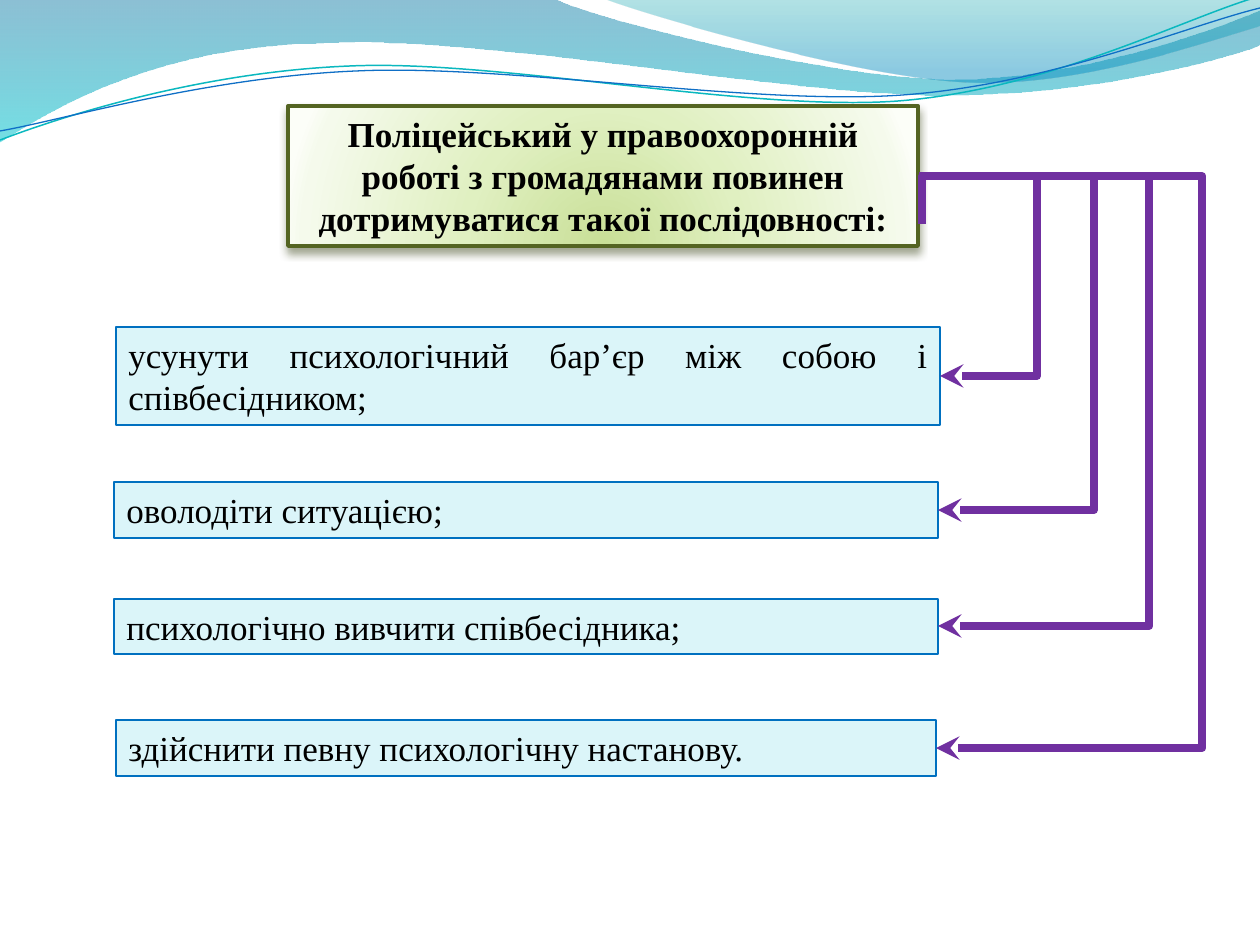
from dataclasses import dataclass
from typing import Optional

from lxml import etree
from pptx import Presentation
from pptx import util as u
from pptx.dml.color import RGBColor
from pptx.enum import shapes, text
from pptx.oxml import ns, parse_xml

PX = 914400 // 126  # EMU in one px
FONT = "Times New Roman"

BLACK = RGBColor(0x00, 0x00, 0x00)
PALE_CYAN = RGBColor(0xDB, 0xF5, 0xF9)
BLUE = RGBColor(0x00, 0x70, 0xC0)
PURPLE = RGBColor(0x70, 0x30, 0xA0)
OLIVE = RGBColor(0x54, 0x64, 0x22)
DARK_OLIVE = RGBColor(0x3A, 0x45, 0x19)
TEAL_LINE = RGBColor(0x0A, 0xB8, 0xBF)
BLUE_LINE = RGBColor(0x0F, 0x6F, 0xC6)
DEEP_TEAL = RGBColor(0x00, 0x74, 0xA1)
TURQUOISE = RGBColor(0x00, 0xC6, 0xCF)
SEA_GREEN = RGBColor(0x00, 0xA1, 0xA9)
SKY = RGBColor(0x00, 0x8B, 0xBF)
GREENS = (RGBColor(0xC9, 0xDF, 0x97), RGBColor(0xE0, 0xF0, 0xC1),
          RGBColor(0xF5, 0xFA, 0xEC), RGBColor(0xFC, 0xFE, 0xF8))

LINEAR_DOWN = '<a:lin ang="5400000" scaled="1"/>'
FROM_BELOW = ('<a:path path="circle"><a:fillToRect l="50000" t="130000" '
              'r="50000" b="-30000"/></a:path>')


@dataclass
class Stop:
    percent: int
    color: RGBColor
    alpha: int = 100


@dataclass
class Wave:
    start: tuple
    segments: list  # one point is a straight side, three points are a curve
    stops: Optional[list] = None
    line: Optional[RGBColor] = None
    weight: float = 0


@dataclass
class Step:
    wording: str
    left: int
    top: int
    width: int
    height: int
    lane: int  # x of the vertical part of its arrow
    from_side: bool = False  # arrow first climbs along the heading

    @property
    def tip(self) -> tuple:
        return self.left + self.width, self.top + self.height // 2


WAVES = [
    Wave((0, 0), [
        [(554, -1)],
        [(600, 21), (837, 79), (955, 79)],
        [(1075, 79), (1207, 33), (1260, 11)],
        [(1261, 45)],
        [(1239, 55), (1096, 96), (940, 95)],
        [(784, 95), (481, 35), (324, 43)],
        [(163, 45), (58, 105), (-1, 142)],
    ], stops=[Stop(0, DEEP_TEAL, 45), Stop(100, TURQUOISE, 55)]),
    Wave((604, -1), [
        [(641, 14), (859, 78), (969, 82)],
        [(1079, 87), (1211, 40), (1260, 26)],
        [(1260, 0)],
    ], stops=[Stop(0, SEA_GREEN, 30), Stop(80, SKY, 45)]),
    Wave((0, 140), [
        [(60, 117), (199, 72), (349, 66)],
        [(498, 59), (747, 112), (898, 101)],
        [(1050, 89), (1182, 19), (1257, -3)],
    ], line=TEAL_LINE, weight=0.85),
    Wave((0, 131), [
        [(59, 121), (207, 77), (357, 71)],
        [(508, 64), (752, 106), (903, 95)],
        [(1053, 84), (1186, 26), (1260, 8)],
    ], line=BLUE_LINE, weight=0.75),
]

HEADING = ("Поліцейський у правоохоронній роботі з громадянами повинен "
           "дотримуватися такої послідовності:")
STEPS = [
    Step("здійснити певну психологічну настанову.", 116, 720, 820, 56, 1202),
    Step("психологічно вивчити співбесідника;", 114, 599, 824, 55, 1149, True),
    Step("оволодіти ситуацією;", 114, 482, 824, 56, 1094),
    Step("усунути психологічний бар’єр між собою і співбесідником;",
         116, 327, 824, 98, 1037),
]
TRUNK = (919, 176)  # common start of the arrows
SIDE_START = (922, 224)


def set_gradient(shape, stops: list, direction: str) -> None:
    shape.fill.gradient()
    marks = "".join(
        f'<a:gs pos="{s.percent * 1000}"><a:srgbClr val="{s.color}">'
        f'<a:alpha val="{s.alpha * 1000}"/></a:srgbClr></a:gs>' for s in stops)
    gradient = parse_xml(f'<a:gradFill {ns.nsdecls("a")} rotWithShape="1">'
                         f'<a:gsLst>{marks}</a:gsLst>{direction}</a:gradFill>')
    properties = shape._element.spPr
    properties.replace(properties.find(ns.qn("a:gradFill")), gradient)


def set_outline(shape, color: RGBColor, weight: float) -> None:
    shape.line.color.rgb = color
    shape.line.width = u.Pt(weight)


def draw_wave(slide, wave: Wave) -> None:
    builder = slide.shapes.build_freeform(*wave.start, scale=PX)
    builder.add_line_segments([p for segment in wave.segments for p in segment],
                              close=wave.stops is not None)
    ribbon = builder.convert_to_shape()
    ribbon.shadow.inherit = False
    # Turn each run of three points into one Bézier curve
    sides = iter(list(ribbon._element.spPr.iter(ns.qn("a:lnTo"))))
    for segment in wave.segments:
        group = [next(sides) for _ in segment]
        if len(group) == 3:
            curve = etree.Element(ns.qn("a:cubicBezTo"))
            group[0].addprevious(curve)
            for side in group:
                curve.append(side[0])
                side.getparent().remove(side)
    if wave.stops:
        set_gradient(ribbon, wave.stops, LINEAR_DOWN)
        ribbon.line.fill.background()
    else:
        ribbon.fill.background()
        set_outline(ribbon, wave.line, wave.weight)


def write(shape, wording: str, align, bold: bool) -> None:
    frame = shape.text_frame
    frame.word_wrap = True
    frame.auto_size = text.MSO_AUTO_SIZE.NONE
    frame.vertical_anchor = text.MSO_ANCHOR.TOP
    paragraph = frame.paragraphs[0]
    paragraph.alignment = align
    run = paragraph.add_run()
    run.text = wording
    run.font.name, run.font.size, run.font.bold = FONT, u.Pt(20), bold
    run.font.color.rgb = BLACK


def draw_heading(slide) -> None:
    heading = slide.shapes.title
    heading.left, heading.top = 288 * PX, 106 * PX
    heading.width, heading.height = 630 * PX, 140 * PX
    set_gradient(heading, [Stop(p, c) for p, c in zip((0, 43, 93, 100), GREENS)],
                 FROM_BELOW)
    set_outline(heading, OLIVE, 2.25)
    heading._element.spPr.append(parse_xml(
        f'<a:effectLst {ns.nsdecls("a")}><a:outerShdw blurRad="{u.Pt(4.5)}" '
        f'dist="{u.Pt(3)}" dir="5400000" rotWithShape="0">'
        f'<a:srgbClr val="{DARK_OLIVE}"><a:alpha val="48000"/></a:srgbClr>'
        f'</a:outerShdw></a:effectLst>'))
    write(heading, HEADING, text.PP_ALIGN.CENTER, True)


def draw_step(slide, step: Step) -> None:
    box = slide.shapes.add_shape(
        shapes.MSO_SHAPE.RECTANGLE, step.left * PX, step.top * PX,
        step.width * PX, step.height * PX)
    box.shadow.inherit = False
    box.fill.solid()
    box.fill.fore_color.rgb = PALE_CYAN
    set_outline(box, BLUE, 1.5)
    write(box, step.wording, text.PP_ALIGN.JUSTIFY, False)


def draw_arrow(slide, step: Step) -> None:
    (x1, y1), (x2, y2) = SIDE_START if step.from_side else TRUNK, step.tip
    bends = [(step.lane - x1) / (x2 - x1)]
    arrow = slide.shapes.add_connector(shapes.MSO_CONNECTOR.ELBOW,
                                       x1 * PX, y1 * PX, x2 * PX, y2 * PX)
    properties = arrow._element.spPr
    geometry = properties.find(ns.qn("a:prstGeom"))
    if step.from_side:
        # A quarter turn lets the arrow leave upwards, then round the lane
        bends.insert(0, (TRUNK[1] - y1) / (y2 - y1))
        geometry.set("prst", "bentConnector4")
        wide, high = y2 - y1, x2 - x1
        arrow.left = (x1 + x2 - wide) * PX // 2
        arrow.top = (y1 + y2 - high) * PX // 2
        arrow.width, arrow.height = wide * PX, high * PX
        properties.xfrm.set("rot", "16200000")
        properties.xfrm.set("flipH", "1")
    guides = geometry.find(ns.qn("a:avLst"))
    for number, bend in enumerate(bends, 1):
        etree.SubElement(guides, ns.qn("a:gd"), name=f"adj{number}",
                         fmla=f"val {round(bend * 100000)}")
    set_outline(arrow, PURPLE, 4.5)
    etree.SubElement(arrow.line._get_or_add_ln(), ns.qn("a:tailEnd"), type="stealth")
    etree.SubElement(properties, ns.qn("a:effectLst"))


def main() -> None:
    deck = Presentation()
    deck.slide_width, deck.slide_height = u.Inches(10), u.Inches(7.5)
    slide = deck.slides.add_slide(deck.slide_layouts[5])
    # Waves along the top
    for wave in WAVES:
        draw_wave(slide, wave)
    # Heading and the steps it leads to
    draw_heading(slide)
    for step in STEPS:
        draw_step(slide, step)
    for step in STEPS:
        draw_arrow(slide, step)
    deck.save("out.pptx")


if __name__ == "__main__":
    main()
